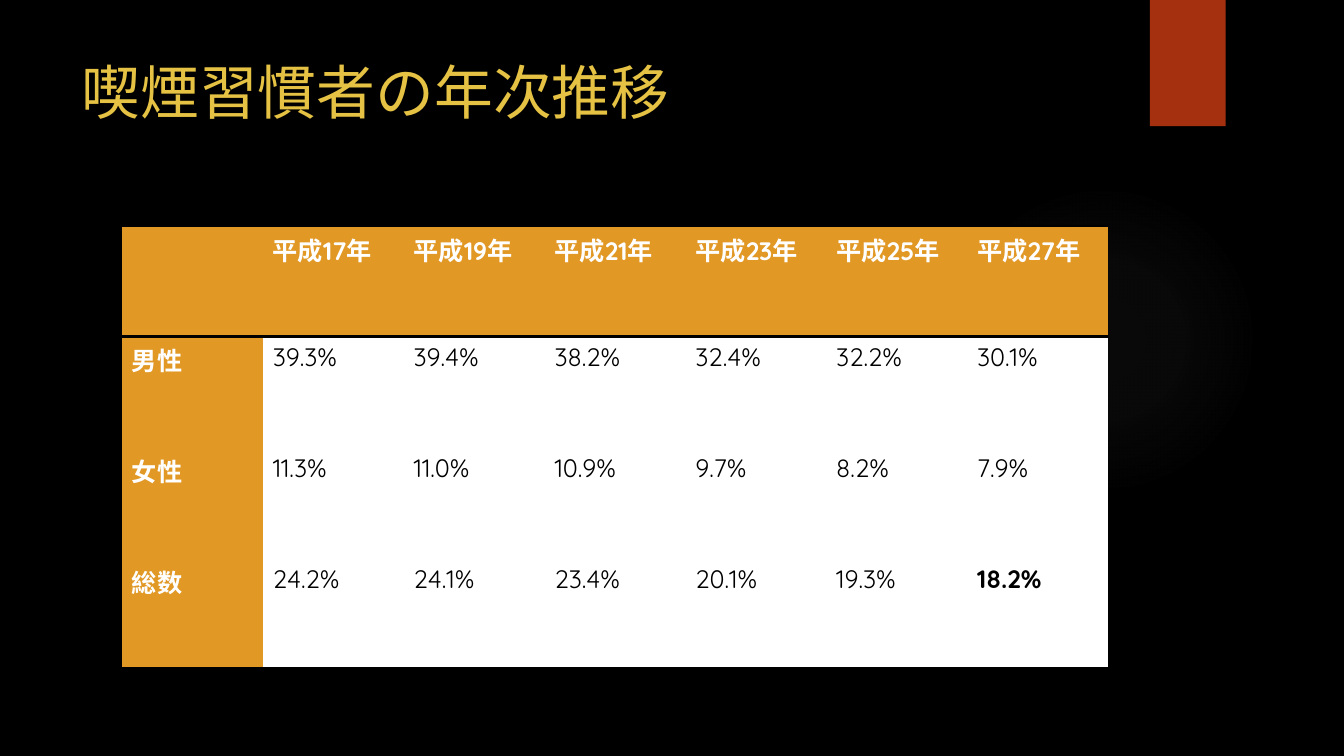
import dataclasses

import lxml.etree
import pptx
import pptx.dml.color
import pptx.enum.shapes
import pptx.enum.text
import pptx.oxml
import pptx.oxml.ns
import pptx.util
from pptx.util import Cm


@dataclasses.dataclass(frozen=True)
class Theme:
    """Colours, font and type sizes of the slide."""
    font: str = "Quicksand"
    background: str = "000000"
    title: str = "E5C243"
    tab: str = "A5300F"
    glow: str = "848484"
    header: str = "E19825"
    header_text: str = "FFFFFF"
    body: str = "FFFFFF"
    body_text: str = "000000"
    rule: str = "000000"
    title_size: int = 42
    table_size: int = 18
    rule_width: int = 2


THEME = Theme()
NO_GRID_STYLE = "{2D5ABB26-0587-4C30-8999-92F81FD0307C}"
GLOW_STOPS = ((0, 7), (36, 6), (69, 0))
YEARS = (17, 19, 21, 23, 25, 27)
SMOKING_RATES = {
    "男性": (39.3, 39.4, 38.2, 32.4, 32.2, 30.1),
    "女性": (11.3, 11.0, 10.9, 9.7, 8.2, 7.9),
    "総数": (24.2, 24.1, 23.4, 20.1, 19.3, 18.2),
}


def rgb(colour):
    """Turn a hex string into a colour."""
    return pptx.dml.color.RGBColor.from_string(colour)


def paint(fill, colour):
    """Make a fill solid."""
    fill.solid()
    fill.fore_color.rgb = rgb(colour)


def style_text(text_frame, size, colour, bold=False):
    """Format every run of a text frame."""
    for paragraph in text_frame.paragraphs:
        for run in paragraph.runs:
            run.font.name = THEME.font
            run.font.size = pptx.util.Pt(size)
            run.font.bold = bold
            run.font.color.rgb = rgb(colour)


def add_plain_shape(slide, kind, left, top, width, height, colour):
    """Add a filled shape without line or shadow."""
    shape = slide.shapes.add_shape(kind, Cm(left), Cm(top), Cm(width), Cm(height))
    shape.shadow.inherit = False
    shape.line.fill.background()
    paint(shape.fill, colour)
    return shape


def add_glow(slide):
    """Add the faint round light behind the table."""
    glow = add_plain_shape(slide, pptx.enum.shapes.MSO_SHAPE.OVAL,
                           23.9, 4.65, 7.82, 7.82, THEME.glow)
    stops = "".join(
        f'<a:gs pos="{position * 1000}"><a:srgbClr val="{THEME.glow}">'
        f'<a:alpha val="{opacity * 1000}"/></a:srgbClr></a:gs>'
        for position, opacity in GLOW_STOPS)
    gradient = pptx.oxml.parse_xml(
        f'<a:gradFill {pptx.oxml.ns.nsdecls("a")}><a:gsLst>{stops}</a:gsLst>'
        '<a:path path="circle"><a:fillToRect l="50000" t="50000" r="50000" b="50000"/>'
        '</a:path></a:gradFill>')
    solid = glow.element.spPr.find(pptx.oxml.ns.qn("a:solidFill"))
    solid.getparent().replace(solid, gradient)


def set_title(slide, wording):
    """Place and format the slide title."""
    title = slide.shapes.title
    title.left, title.top, title.width, title.height = Cm(1.8), Cm(1.27), Cm(26.14), Cm(3.89)
    frame = title.text_frame
    frame.text = wording
    frame.word_wrap = True
    frame.auto_size = pptx.enum.text.MSO_AUTO_SIZE.NONE
    frame.vertical_anchor = pptx.enum.text.MSO_ANCHOR.TOP
    frame.paragraphs[0].alignment = pptx.enum.text.PP_ALIGN.LEFT
    style_text(frame, THEME.title_size, THEME.title)


def add_rules(cell, edges):
    """Draw rules on the given edges of a cell, ahead of its fill."""
    properties = cell._tc.get_or_add_tcPr()
    for index, edge in enumerate(edges):
        rule = lxml.etree.Element(pptx.oxml.ns.qn(f"a:ln{edge}"),
                                  w=str(pptx.util.Pt(THEME.rule_width)))
        solid = lxml.etree.SubElement(rule, pptx.oxml.ns.qn("a:solidFill"))
        lxml.etree.SubElement(solid, pptx.oxml.ns.qn("a:srgbClr"), val=THEME.rule)
        properties.insert(index, rule)


def add_rate_table(slide):
    """Add the table of smoking rates by sex and year."""
    rows = [["", *(f"平成{year}年" for year in YEARS)]]
    rows += [[group, *(f"{rate:.1f}%" for rate in rates)]
             for group, rates in SMOKING_RATES.items()]
    last_row, last_column = len(rows) - 1, len(YEARS)
    frame = slide.shapes.add_table(len(rows), last_column + 1,
                                   Cm(3.07), Cm(5.69), Cm(24.85), Cm(11.16))
    rates_table = frame.table
    rates_table.first_col = True
    rates_table.horz_banding = False
    for style in frame.element.iter(pptx.oxml.ns.qn("a:tableStyleId")):
        style.text = NO_GRID_STYLE
    for column in rates_table.columns:
        column.width = Cm(3.55)
    for row in rates_table.rows:
        row.height = Cm(2.79)
    for row, wordings in enumerate(rows):
        for column, wording in enumerate(wordings):
            cell = rates_table.cell(row, column)
            heading = row == 0 or column == 0
            latest_total = (row, column) == (last_row, last_column)
            cell.text_frame.text = wording
            style_text(cell.text_frame, THEME.table_size,
                       THEME.header_text if heading else THEME.body_text,
                       bold=heading or latest_total)
            paint(cell.fill, THEME.header if heading else THEME.body)
            add_rules(cell, {0: "TB", last_row: "B"}.get(row, ""))


def main():
    """Build the slide and save it."""
    deck = pptx.Presentation()
    deck.slide_width, deck.slide_height = Cm(33.87), Cm(19.05)
    slide = deck.slides.add_slide(deck.slide_layouts[5])
    paint(slide.background.fill, THEME.background)
    add_glow(slide)
    add_plain_shape(slide, pptx.enum.shapes.MSO_SHAPE.RECTANGLE,
                    28.98, 0, 1.91, 3.18, THEME.tab)
    set_title(slide, "喫煙習慣者の年次推移")
    add_rate_table(slide)
    deck.save("out.pptx")


if __name__ == "__main__":
    main()
